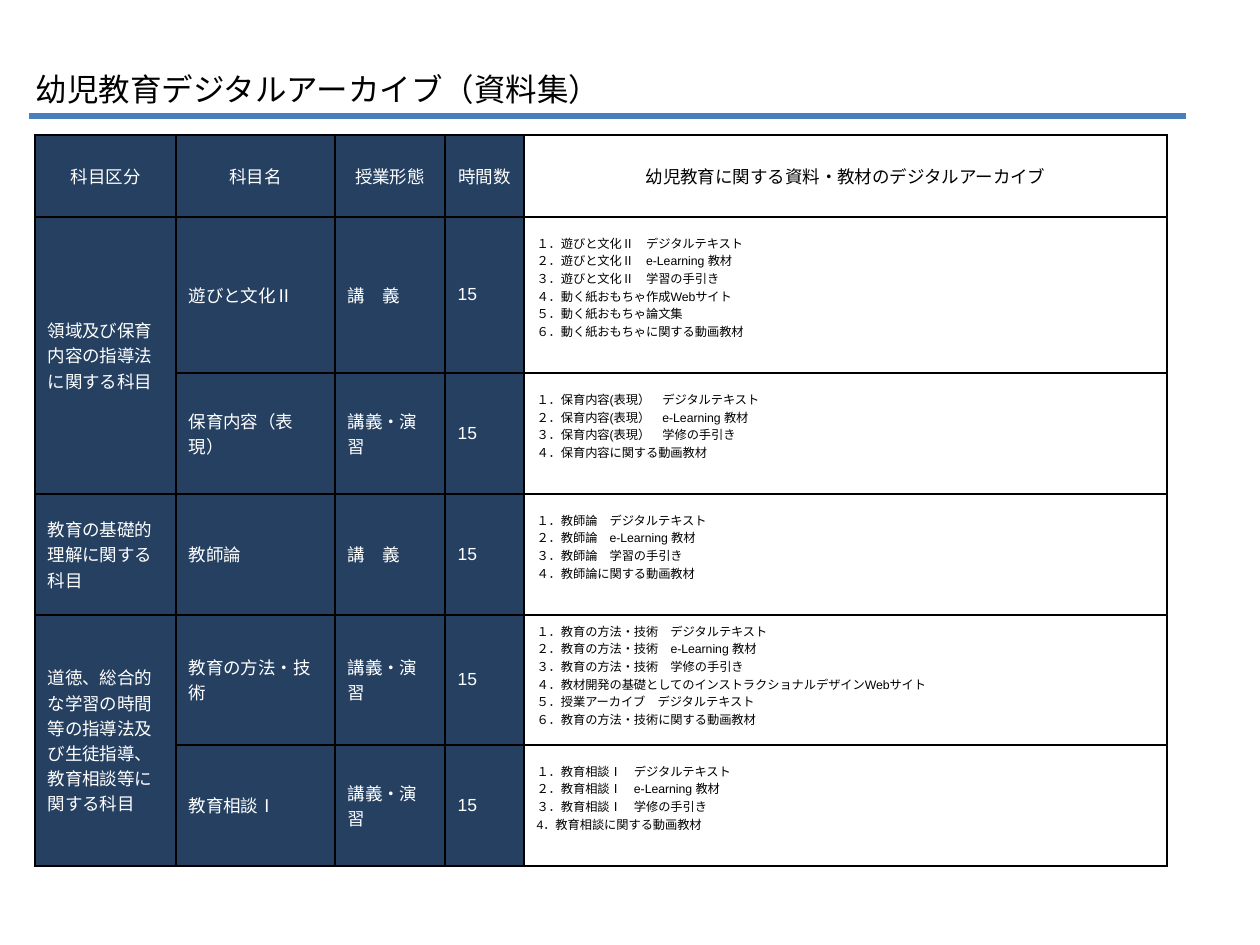
import pptx
import pptx.dml.color
import pptx.enum.shapes
import pptx.enum.text
import pptx.oxml
import pptx.oxml.ns
import pptx.util

PX = 914400 // 126
NAVY, WHITE, BLACK = "254061", "FFFFFF", "000000"
MIDDLE = pptx.enum.text.MSO_ANCHOR.MIDDLE
LEFT, CENTER = pptx.enum.text.PP_ALIGN.LEFT, pptx.enum.text.PP_ALIGN.CENTER

COLUMN_WIDTHS = [141, 159, 110, 79, 643]
HEADER_HEIGHT = 82
HEADERS = ["科目区分", "科目名", "授業形態", "時間数",
           "幼児教育に関する資料・教材のデジタルアーカイブ"]

# Category and its subjects: row height, space below list, name, style, hours, materials
CATEGORIES = [
    ("領域及び保育内容の指導法に関する科目", [
        (156, 22, "遊びと文化Ⅱ", "講　義", "15", [
            "１．遊びと文化Ⅱ　デジタルテキスト",
            "２．遊びと文化Ⅱ　e-Learning 教材",
            "３．遊びと文化Ⅱ　学習の手引き",
            "４．動く紙おもちゃ作成Webサイト",
            "５．動く紙おもちゃ論文集",
            "６．動く紙おもちゃに関する動画教材"]),
        (121, 22, "保育内容（表現）", "講義・演習", "15", [
            "１．保育内容(表現）　デジタルテキスト",
            "２．保育内容(表現）　e-Learning 教材",
            "３．保育内容(表現）　学修の手引き",
            "４．保育内容に関する動画教材"]),
    ]),
    ("教育の基礎的理解に関する科目", [
        (121, 22, "教師論", "講　義", "15", [
            "１．教師論　デジタルテキスト",
            "２．教師論　e-Learning 教材",
            "３．教師論　学習の手引き",
            "４．教師論に関する動画教材"]),
    ]),
    ("道徳、総合的な学習の時間等の指導法及び生徒指導、教育相談等に関する科目", [
        (130, 16, "教育の方法・技術", "講義・演習", "15", [
            "１．教育の方法・技術　デジタルテキスト",
            "２．教育の方法・技術　e-Learning 教材",
            "３．教育の方法・技術　学修の手引き",
            "４．教材開発の基礎としてのインストラクショナルデザインWebサイト",
            "５．授業アーカイブ　デジタルテキスト",
            "６．教育の方法・技術に関する動画教材"]),
        (121, 22, "教育相談Ⅰ", "講義・演習", "15", [
            "１．教育相談Ⅰ　デジタルテキスト",
            "２．教育相談Ⅰ　e-Learning 教材",
            "３．教育相談Ⅰ　学修の手引き",
            "4．教育相談に関する動画教材"]),
    ]),
]


def px(n):
    return pptx.util.Emu(n * PX)


def rgb(color):
    return pptx.dml.color.RGBColor.from_string(color)


def set_all(target, values):
    for name, value in values.items():
        setattr(target, name, value)


def write(tf, lines, size, color, font="Arial", align=LEFT):
    for i, line in enumerate(lines):
        p = tf.paragraphs[0] if i == 0 else tf.add_paragraph()
        p.alignment = align
        r = p.add_run()
        r.text = line
        set_all(r.font, {"name": font, "size": pptx.util.Pt(size), "bold": False})
        r.font.color.rgb = rgb(color)


def add_title(s, text):
    sp = s.shapes.title
    set_all(sp, {"left": px(23), "top": px(64), "width": px(1171), "height": px(89)})
    set_all(sp.text_frame, {"word_wrap": True,
                            "vertical_anchor": pptx.enum.text.MSO_ANCHOR.TOP})
    write(sp.text_frame, [text], 18, BLACK, "Calibri")


def add_rule(s):
    line = s.shapes.add_connector(pptx.enum.shapes.MSO_CONNECTOR.STRAIGHT,
                                  px(29), px(116), px(1186), px(116))
    line.line.color.rgb = rgb("4B7EBC")
    line.line.width = pptx.util.Pt(3)
    sp_pr = line._element.spPr
    sp_pr.append(sp_pr.makeelement(pptx.oxml.ns.qn("a:effectLst"), {}))


def format_cell(cell, fill):
    """Draw the four borders, then the fill, as the schema orders them."""
    tc_pr = cell._tc.get_or_add_tcPr()
    for side in ("lnL", "lnR", "lnT", "lnB"):
        tc_pr.append(pptx.oxml.parse_xml(
            f'<a:{side} {pptx.oxml.ns.nsdecls("a")} w="12700"><a:solidFill>'
            f'<a:srgbClr val="{BLACK}"/></a:solidFill></a:{side}>'))
    cell.vertical_anchor = MIDDLE
    if fill:
        cell.fill.solid()
        cell.fill.fore_color.rgb = rgb(fill)
    else:
        cell.fill.background()


def add_table(s):
    heights = [HEADER_HEIGHT] + [subject[0] for _, subjects in CATEGORIES
                                 for subject in subjects]
    last = len(COLUMN_WIDTHS) - 1
    table = s.shapes.add_table(len(heights), len(COLUMN_WIDTHS), px(35), px(135),
                               px(sum(COLUMN_WIDTHS)), px(sum(heights))).table
    set_all(table, {"first_row": False, "horz_banding": False})
    for column, width in zip(table.columns, COLUMN_WIDTHS):
        column.width = px(width)
    for r, height in enumerate(heights):
        table.rows[r].height = px(height)
        for c in range(last + 1):
            format_cell(table.cell(r, c), NAVY if c < last else None)
    for c, header in enumerate(HEADERS):
        write(table.cell(0, c).text_frame, [header], 10,
              WHITE if c < last else BLACK, align=CENTER)
    fill_categories(table, last)


def fill_categories(table, last):
    row = 1
    for category, subjects in CATEGORIES:
        cell = table.cell(row, 0)
        if len(subjects) > 1:
            cell.merge(table.cell(row + len(subjects) - 1, 0))
        write(cell.text_frame, [category], 10, WHITE)
        for _, space_below, *details, materials in subjects:
            for c, text in enumerate(details, 1):
                write(table.cell(row, c).text_frame, [text], 10, WHITE)
            cell = table.cell(row, last)
            cell.margin_bottom = px(space_below)
            write(cell.text_frame, materials, 7, BLACK)
            row += 1


def main():
    prs = pptx.Presentation()
    set_all(prs, {"slide_width": px(1260), "slide_height": px(945)})
    s = prs.slides.add_slide(prs.slide_layouts[5])
    add_title(s, "幼児教育デジタルアーカイブ（資料集）")
    add_rule(s)
    add_table(s)
    prs.save("out.pptx")


if __name__ == "__main__":
    main()
